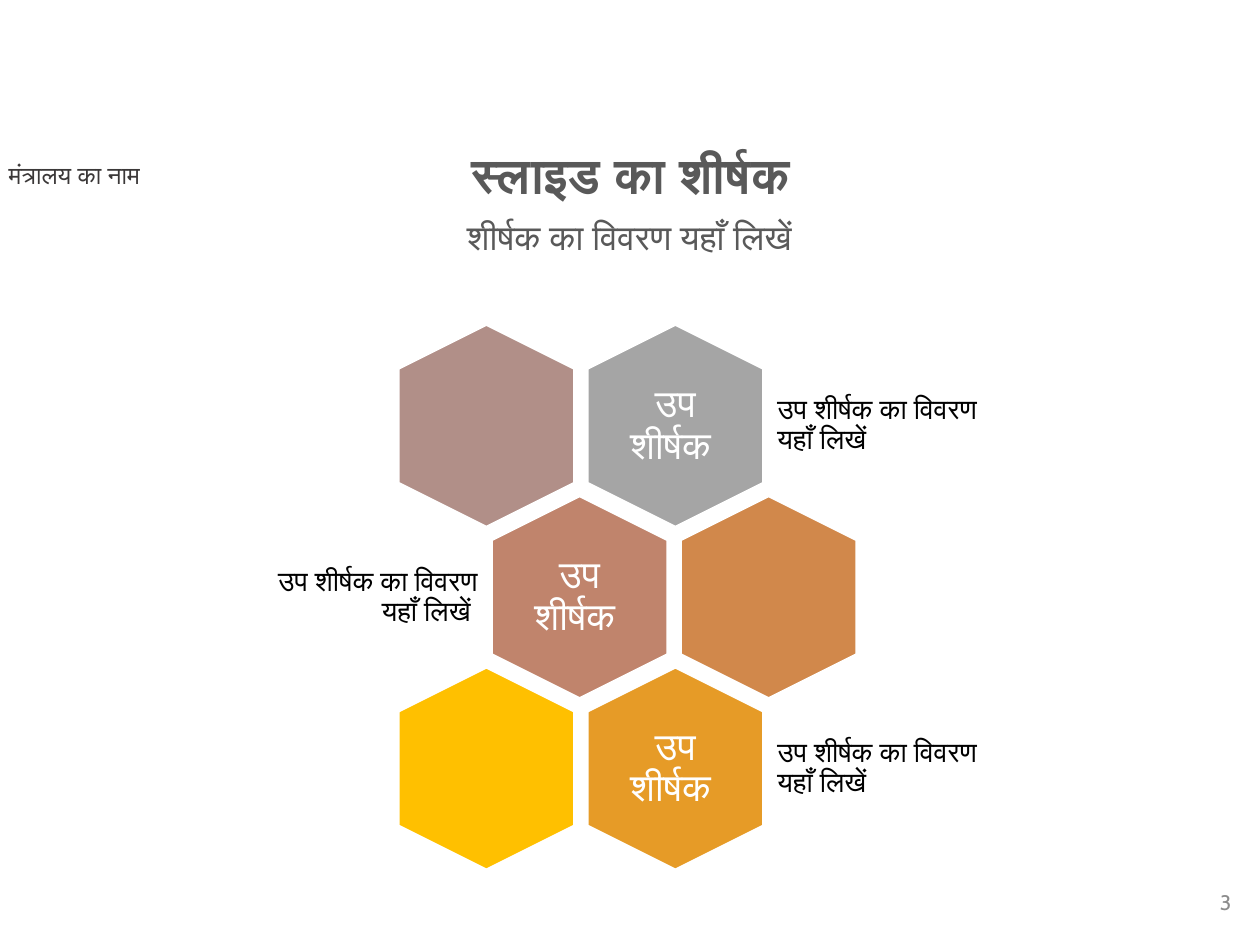
from dataclasses import dataclass
from pptx import Presentation
from pptx import util as u
from pptx.dml.color import RGBColor
from pptx.enum import shapes, text

WHITE = RGBColor(255, 255, 255)
BLACK = RGBColor(0, 0, 0)
DARK = RGBColor(0x3B, 0x38, 0x38)
GRAY = RGBColor(0x59, 0x59, 0x59)
PALE = RGBColor(0x8C, 0x8C, 0x8C)
STEEL = RGBColor(0xA5, 0xA5, 0xA5)
MAUVE = RGBColor(0xB1, 0x8F, 0x88)
CLAY = RGBColor(0xC0, 0x84, 0x6C)
RUST = RGBColor(0xD1, 0x88, 0x4B)
AMBER = RGBColor(0xE6, 0x9B, 0x27)
GOLD = RGBColor(0xFF, 0xC0, 0x00)

LEFT = text.PP_ALIGN.LEFT
MID = text.PP_ALIGN.CENTER
RIGHT = text.PP_ALIGN.RIGHT
TOP = text.MSO_ANCHOR.TOP
CORE = text.MSO_ANCHOR.MIDDLE

COL, ROW, SHIFT = 1.5, 1.36, 0.74
ORIGIN_X, ORIGIN_Y = 3.86, 3.38
LONG, SHORT = 1.6, 1.39
LABEL = "उप शीर्षक "
DETAIL = "उप शीर्षक का विवरण यहाँ लिखें"


@dataclass
class Box:
    x: float
    y: float
    w: float
    h: float


@dataclass
class Style:
    size: int
    color: RGBColor
    align: int = LEFT
    anchor: int = TOP
    bold: bool = False
    font: str = "Calibri"
    line: float = 1.0
    inset: float | None = None


@dataclass
class Cell:
    col: int
    row: int
    color: RGBColor
    side: int = 0


CELLS = [
    Cell(1, 0, STEEL, 1),
    Cell(0, 0, MAUVE),
    Cell(0, 1, CLAY, -1),
    Cell(1, 1, RUST),
    Cell(1, 2, AMBER, 1),
    Cell(0, 2, GOLD),
]

HEADS = [
    ("मंत्रालय का नाम", Box(-0.03, 1.22, 2.18, 0.34), Style(14, DARK)),
    ("3", Box(7.62, 6.96, 2.25, 0.4), Style(12, PALE, RIGHT, CORE, font="Cabin")),
    ("शीर्षक का विवरण यहाँ लिखें", Box(1.46, 1.7, 7.07, 0.63),
     Style(20, GRAY, MID, line=0.9)),
    ("स्लाइड का शीर्षक", Box(1.86, 1.15, 6.29, 0.47),
     Style(28, GRAY, MID, bold=True, line=0.9)),
]


def place(box: Box) -> list[int]:
    return [u.Inches(n) for n in (box.x, box.y, box.w, box.h)]


def write(slide, words: str, box: Box, style: Style) -> None:
    frame = slide.shapes.add_textbox(*place(box)).text_frame
    frame.word_wrap = True
    frame.vertical_anchor = style.anchor
    if style.inset is not None:
        pad = u.Inches(style.inset)
        frame.margin_left = frame.margin_right = pad
        frame.margin_top = frame.margin_bottom = pad
    para = frame.paragraphs[0]
    para.alignment = style.align
    para.line_spacing = style.line
    run = para.add_run()
    run.text = words
    run.font.name = style.font
    run.font.size = u.Pt(style.size)
    run.font.bold = style.bold
    run.font.color.rgb = style.color


def draw(slide, cell: Cell) -> None:
    x = ORIGIN_X + COL * cell.col + SHIFT * (cell.row % 2)
    y = ORIGIN_Y + ROW * cell.row
    box = Box(x - LONG / 2, y - SHORT / 2, LONG, SHORT)
    hexa = slide.shapes.add_shape(shapes.MSO_SHAPE.HEXAGON, *place(box))
    hexa.rotation = 90
    hexa.adjustments[0] = 0.25
    hexa.shadow.inherit = False
    hexa.fill.solid()
    hexa.fill.fore_color.rgb = cell.color
    hexa.line.color.rgb = WHITE
    hexa.line.width = u.Pt(1)
    if not cell.side:
        return
    write(slide, LABEL, Box(x - 0.48, y - 0.55, 0.96, 1.1),
          Style(22, WHITE, MID, CORE, line=0.9, inset=0.09))
    wide, gap = 1.78, 0.74
    edge = x + gap if cell.side > 0 else x - gap - wide
    words = DETAIL if cell.side > 0 else DETAIL + " "
    align = LEFT if cell.side > 0 else RIGHT
    write(slide, words, Box(edge, y - 0.48, wide, 0.96),
          Style(16, BLACK, align, CORE, line=0.9, inset=0.07))


def main() -> None:
    deck = Presentation()
    deck.slide_width, deck.slide_height = u.Inches(10), u.Inches(7.5)
    slide = deck.slides.add_slide(deck.slide_layouts[6])
    for words, box, style in HEADS:
        write(slide, words, box, style)
    for cell in CELLS:
        draw(slide, cell)
    deck.save("out.pptx")


if __name__ == "__main__":
    main()
